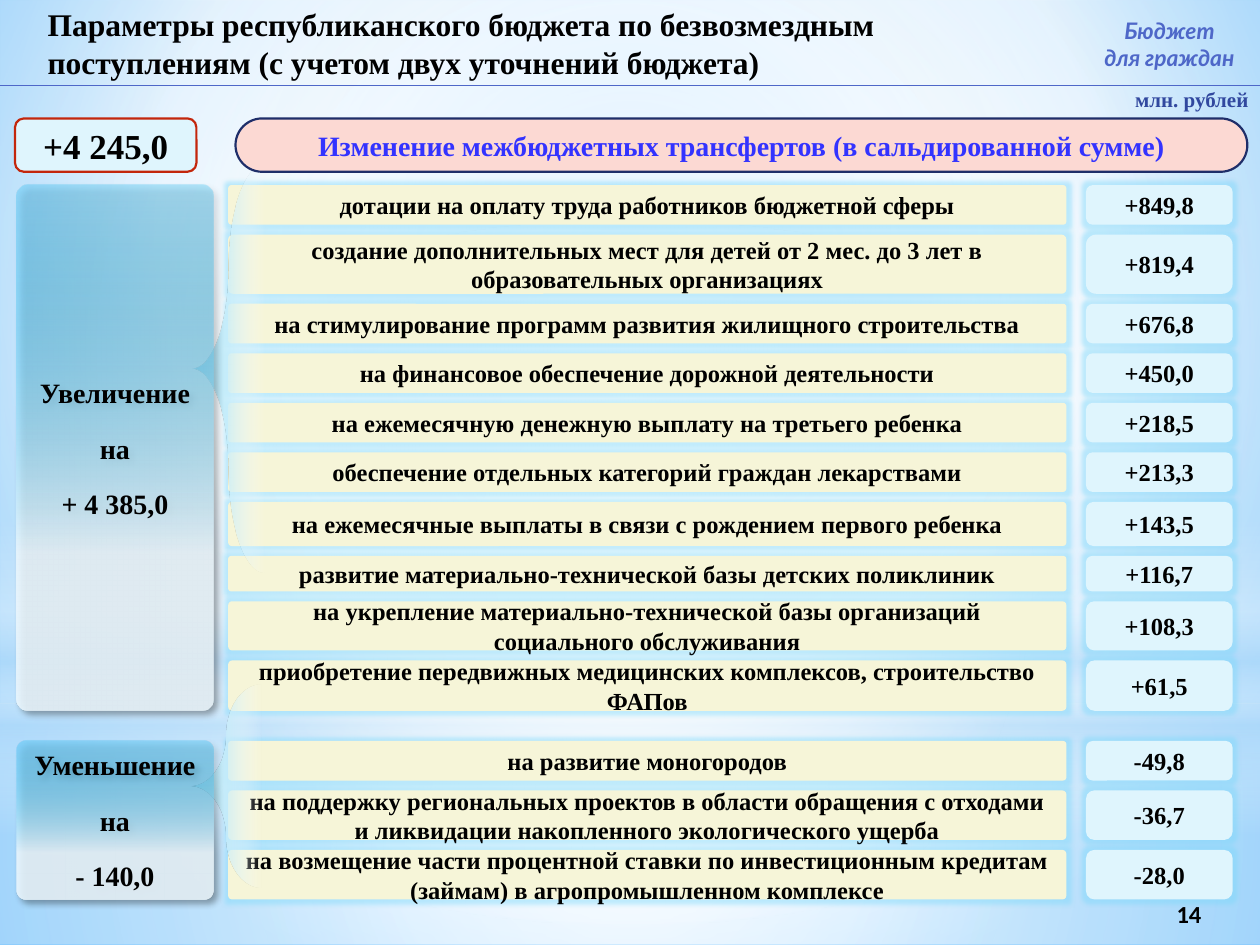
from dataclasses import dataclass
from typing import NamedTuple

from lxml import etree
from pptx import Presentation
from pptx.dml.color import RGBColor
from pptx.enum.shapes import MSO_CONNECTOR, MSO_SHAPE
from pptx.enum.text import MSO_ANCHOR, MSO_AUTO_SIZE, PP_ALIGN
from pptx.oxml.ns import qn
from pptx.util import Pt

RECT, OVAL = MSO_SHAPE.RECTANGLE, MSO_SHAPE.OVAL
ROUNDED, BRACE = MSO_SHAPE.ROUNDED_RECTANGLE, MSO_SHAPE.LEFT_BRACE
LEFT, CENTER, RIGHT = PP_ALIGN.LEFT, PP_ALIGN.CENTER, PP_ALIGN.RIGHT
TOP, MIDDLE = MSO_ANCHOR.TOP, MSO_ANCHOR.MIDDLE
STRAIGHT, NO_AUTOSIZE = MSO_CONNECTOR.STRAIGHT, MSO_AUTO_SIZE.NONE


@dataclass(frozen=True)
class Theme:
    serif: str = "Times New Roman"
    brand: str = "Lato"
    number: str = "Calibri"
    ink: str = "000000"
    accent: str = "4E67C8"
    unit: str = "31489F"
    heading: str = "3333FF"
    heading_fill: str = "FCD9D3"
    heading_line: str = "1F2E69"
    total_line: str = "C3260C"
    label_fill: str = "F6F5D8"
    value_fill: str = "DFF5FD"
    glow: str = "7DD9FB"
    total_size: float = 20
    title_size: float = 18
    panel_size: float = 16
    row_size: float = 14
    brand_size: float = 13
    unit_size: float = 12
    sky: tuple = ((0, "9ED5FF", 100), (60, "FFFFFF", 100), (100, "5BB9FF", 100))
    floor: tuple = ((0, "FFFFFF", 91), (37, "FFFFFF", 76), (100, "B4DCFA", 79))
    wall: tuple = ((0, "FFFFFF", 89), (48, "FFFFFF", 62), (100, "B4DCFA", 79))
    band: tuple = ((0, "FFFFFF", 0), (29, "FFFFFF", 30), (45, "B4DCFA", 40),
                   (55, "FFFFFF", 26), (65, "B4DCFA", 60), (100, "FFFFFF", 0))
    halo: tuple = ((0, "FFFFFF", 100), (56, "FFFFFF", 0))
    brace: tuple = ((0, "9EE0F8", 100), (40, "BFEBFA", 91), (100, "FFFFFF", 0))
    panel: tuple = ((30, "EEF9FF", 84), (100, "00B0F0", 25))


THEME = Theme()


class Box(NamedTuple):
    left: float
    top: float
    width: float
    height: float

    def inner(self, left, top, width, height):
        return Box(self.left + left, self.top + top, width, height)

    def points(self):
        return [Pt(length) for length in self]


INCREASE = [
    ("дотации на оплату труда работников бюджетной сферы", "+849,8", 22.6),
    ("создание дополнительных мест для детей от 2 мес. до 3 лет в образовательных организациях", "+819,4", 33.8),
    ("на стимулирование программ развития жилищного строительства", "+676,8", 22.6),
    ("на финансовое обеспечение дорожной деятельности", "+450,0", 22.6),
    ("на ежемесячную денежную выплату на третьего ребенка", "+218,5", 22.6),
    ("обеспечение отдельных категорий граждан лекарствами", "+213,3", 22.6),
    ("на ежемесячные выплаты в связи с рождением первого ребенка", "+143,5", 25.2),
    ("развитие материально-технической базы детских поликлиник", "+116,7", 20.2),
    ("на укрепление материально-технической базы организаций социального обслуживания", "+108,3", 28.1),
    ("приобретение передвижных медицинских комплексов, строительство ФАПов", "+61,5", 28.8),
]
DECREASE = [
    ("на развитие моногородов", "-49,8", 22.6),
    ("на поддержку региональных проектов в области обращения с отходами и ликвидации накопленного "
     "экологического ущерба", "-36,7", 28.3),
    ("на возмещение части процентной ставки по инвестиционным кредитам (займам) в агропромышленном "
     "комплексе", "-28,0", 28.3),
]


def add_color(parent, color, alpha):
    node = etree.SubElement(parent, qn("a:srgbClr"), val=color)
    etree.SubElement(node, qn("a:alpha"), val=str(alpha * 1000))


def make_gradient(stops, angle=None, focus=(50, 50, 50, 50)):
    gradient = etree.Element(qn("a:gradFill"), rotWithShape="1")
    stop_list = etree.SubElement(gradient, qn("a:gsLst"))
    for position, color, alpha in stops:
        stop = etree.SubElement(stop_list, qn("a:gs"), pos=str(position * 1000))
        add_color(stop, color, alpha)
    if angle is None:
        circle = etree.SubElement(gradient, qn("a:path"), path="circle")
        edges = {edge: str(share * 1000) for edge, share in zip("ltrb", focus)}
        etree.SubElement(circle, qn("a:fillToRect"), edges)
    else:
        etree.SubElement(gradient, qn("a:lin"), ang=str(angle * 60000), scaled="0")
    return gradient


def add_effect(shape, tag, color, alpha, **settings):
    effects = shape.element.spPr.find(qn("a:effectLst"))
    effect = etree.SubElement(effects, qn(tag), {name: str(int(size)) for name, size in settings.items()})
    add_color(effect, color, alpha)


def write(shape, lines, size, color=THEME.ink, font=THEME.serif, align=CENTER, anchor=MIDDLE,
          italic=False, gap=0, wrap=True):
    frame = shape.text_frame
    frame.word_wrap = wrap
    frame.auto_size = NO_AUTOSIZE
    frame.vertical_anchor = anchor
    for index, line in enumerate(lines):
        para = frame.add_paragraph() if index else frame.paragraphs[0]
        para.alignment = align
        para.space_before = Pt(gap if index else 0)
        span = para.add_run()
        span.text = line
        span.font.name = font
        span.font.size = Pt(size)
        span.font.bold = True
        span.font.italic = italic
        span.font.color.rgb = RGBColor.from_string(color)


def add_shape(page, kind, box, fill=None, line=None, adjust=()):
    shape = page.shapes.add_shape(kind, *box.points())
    shape.shadow.inherit = False
    for index, ratio in enumerate(adjust):
        shape.adjustments[index] = ratio
    if fill:
        shape.fill.solid()
        shape.fill.fore_color.rgb = RGBColor.from_string(fill)
    if line:
        shape.line.color.rgb = RGBColor.from_string(line)
        shape.line.width = Pt(1.25)
    else:
        shape.line.fill.background()
    return shape


def add_gradient_shape(page, kind, box, stops, angle=None, adjust=()):
    shape = add_shape(page, kind, box, adjust=adjust)
    shape.fill.background()
    properties = shape.element.spPr
    properties.replace(properties.find(qn("a:noFill")), make_gradient(stops, angle))
    return shape


def add_backdrop(page, box):
    page.background.fill.solid()
    background = page.element.find(".//" + qn("p:bgPr"))
    background.replace(background[0], make_gradient(THEME.sky, focus=(20, 10, 20, 60)))
    add_gradient_shape(page, RECT, box.inner(0, 402, box.width, 138), THEME.floor)
    add_gradient_shape(page, RECT, box.inner(0, 0, box.width, 402), THEME.wall)
    add_gradient_shape(page, RECT, box.inner(0, 297, box.width, 180), THEME.band, 90)
    add_gradient_shape(page, OVAL, box.inner(0, 126, box.width, 402), THEME.halo)


def add_header(page, box):
    title = page.shapes.title
    title.left, title.top, title.width, title.height = box.inner(20, -0.7, 589, 49).points()
    write(title, ["Параметры республиканского бюджета по безвозмездным поступлениям "
                  "(с учетом двух уточнений бюджета)"], THEME.title_size, align=LEFT, anchor=TOP)
    title.element.getparent().append(title.element)

    brand = page.shapes.add_textbox(*box.inner(620, 5.8, 96.5, 39).points())
    write(brand, ["Бюджет", "для граждан"], THEME.brand_size, THEME.accent, THEME.brand,
          anchor=TOP, italic=True, wrap=False)

    left, bottom = box.left, box.top + box.height
    rule = page.shapes.add_connector(STRAIGHT, Pt(left), Pt(bottom), Pt(left + box.width), Pt(bottom))
    rule.line.color.rgb = RGBColor.from_string(THEME.accent)
    rule.line.width = Pt(0.75)
    etree.SubElement(rule.element.spPr, qn("a:effectLst"))


def add_summary(page, box):
    unit = page.shapes.add_textbox(*box.inner(608.4, 0, 96.5, 17.3).points())
    frame = unit.text_frame
    frame.margin_left = frame.margin_right = frame.margin_top = frame.margin_bottom = 0
    write(unit, ["млн. рублей"], THEME.unit_size, THEME.unit, align=RIGHT, anchor=TOP)
    total = add_shape(page, ROUNDED, box.inner(0, 18, 103.7, 30.5), THEME.value_fill, THEME.total_line)
    write(total, ["+4 245,0"], THEME.total_size)
    heading = add_shape(page, ROUNDED, box.inner(126, 18, 578.2, 30.5), THEME.heading_fill,
                        THEME.heading_line, [0.5])
    write(heading, ["Изменение межбюджетных трансфертов (в сальдированной сумме)"],
          THEME.panel_size, THEME.heading)


def add_row_cell(page, box, text, fill, ratio):
    cell = add_shape(page, ROUNDED, box, fill, adjust=[ratio])
    add_effect(cell, "a:glow", THEME.glow, 45, rad=Pt(5))
    write(cell, [text], THEME.row_size)


def add_change_group(page, box, brace_box, lines, rows, gap=5.7):
    top = 0
    for label, value, height in rows:
        add_row_cell(page, box.inner(121, top, 479, height), label, THEME.label_fill, 0.08)
        add_row_cell(page, box.inner(611.2, top, 83.8, height), value, THEME.value_fill, 0.17)
        top += height + gap
    add_gradient_shape(page, BRACE, brace_box, THEME.brace, 0, [1.44, 0.5])
    panel = add_gradient_shape(page, ROUNDED, box.inner(0, 0, 112.5, box.height), THEME.panel, 270, [0.06])
    add_effect(panel, "a:outerShdw", THEME.ink, 40, blurRad=Pt(4), dist=Pt(3), dir=45 * 60000)
    write(panel, lines, THEME.panel_size, gap=12.5)


def add_page_number(page, box):
    number = page.shapes.add_textbox(*box.points())
    write(number, ["14"], THEME.row_size, font=THEME.number)


def main():
    deck = Presentation()
    deck.slide_width, deck.slide_height = Pt(720), Pt(540)
    page = deck.slides.add_slide(deck.slide_layouts[5])
    add_backdrop(page, Box(0, 0, 720, 540))
    add_change_group(page, Box(9.4, 105.8, 695, 300.4), Box(110.2, 94.3, 41, 232.6),
                     ["Увеличение", "на", "+ 4 385,0"], INCREASE)
    add_change_group(page, Box(9.4, 423.4, 695, 90.6), Box(108.7, 391, 41, 116),
                     ["Уменьшение", "на", "- 140,0"], DECREASE)
    add_summary(page, Box(8.6, 49.7, 704.2, 48.5))
    add_header(page, Box(0, 0, 720, 49))
    add_page_number(page, Box(638, 507.6, 82.8, 28.8))
    deck.save("out.pptx")


if __name__ == "__main__":
    main()
